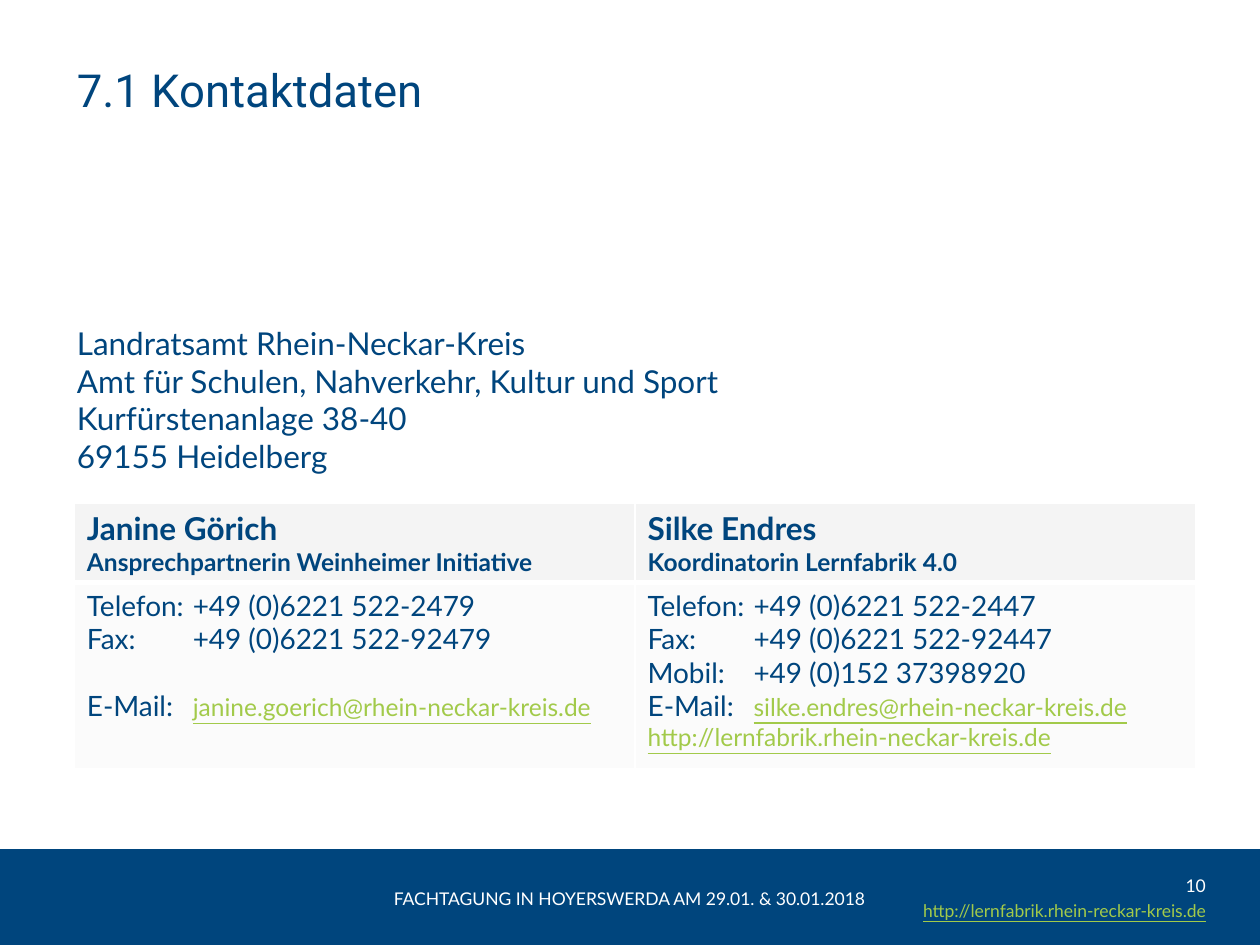
from dataclasses import dataclass

from lxml.etree import SubElement
from pptx import Presentation
from pptx.dml.color import RGBColor as RGB
from pptx.enum.shapes import MSO_SHAPE as SHAPE
from pptx.enum.text import MSO_ANCHOR as ANCHOR, MSO_AUTO_SIZE as AUTO, PP_ALIGN as ALIGN
from pptx.oxml import parse_xml
from pptx.oxml.ns import nsdecls, qn
from pptx.util import Inches, Pt


@dataclass(frozen=True)
class Theme:
    navy: str = "00457D"
    green: str = "A2CA4A"
    white: str = "FFFFFF"
    head_fill: str = "F4F4F4"
    body_fill: str = "FBFBFB"
    heading: str = "Roboto"
    text: str = "Lato"
    title: int = 26
    large: int = 18
    medium: int = 16
    small: int = 14
    footer: int = 10


T = Theme()


def add_run(p, text, size=T.large, color=T.navy, font=T.text, bold=False, underline=False):
    r = p.add_run()
    r.text = text
    r.font.name = font
    r.font.size = Pt(size)
    r.font.bold = bold
    r.font.underline = underline
    r.font.color.rgb = RGB.from_string(color)


def add_paragraph(tf, first):
    return tf.paragraphs[0] if first else tf.add_paragraph()


def add_tab(p, position):
    tabs = SubElement(p._p.get_or_add_pPr(), qn("a:tabLst"))
    SubElement(tabs, qn("a:tab"), pos=str(Inches(position)), algn="l")


def set_borders(cell, top, bottom):
    tcPr = cell._tc.get_or_add_tcPr()
    for i, (side, width) in enumerate(dict(L=1, R=1, T=top, B=bottom).items()):
        tcPr.insert(i, parse_xml(
            f'<a:ln{side} {nsdecls("a")} w="{Pt(width)}"><a:solidFill>'
            f'<a:srgbClr val="{T.white}"/></a:solidFill></a:ln{side}>'))


class SlideBuilder:
    def __init__(self, prs, theme):
        self.theme = theme
        self.s = prs.slides.add_slide(prs.slide_layouts[1])

    def place(self, sp, left, top, width, height):
        sp.left, sp.top, sp.width, sp.height = map(Inches, (left, top, width, height))
        tf = sp.text_frame
        tf.word_wrap = True
        tf.auto_size = AUTO.NONE
        tf.vertical_anchor = ANCHOR.TOP
        return tf

    def title(self, text, *box):
        p = self.place(self.s.shapes.title, *box).paragraphs[0]
        p.alignment = ALIGN.LEFT
        add_run(p, text, size=self.theme.title, font=self.theme.heading)

    def body(self, lines, *box):
        tf = self.place(self.s.placeholders[1], *box)
        for i, line in enumerate(lines):
            p = add_paragraph(tf, i == 0)
            p.space_before = Pt(0)
            pPr = p._p.get_or_add_pPr()
            pPr.set("marL", "0")
            pPr.set("indent", "0")
            SubElement(pPr, qn("a:buNone"))
            add_run(p, line)

    def band(self, *box):
        sp = self.s.shapes.add_shape(SHAPE.RECTANGLE, *map(Inches, box))
        sp.shadow.inherit = False
        sp.fill.solid()
        sp.fill.fore_color.rgb = RGB.from_string(self.theme.navy)
        sp.line.fill.background()

    def footer(self, lines, *box, align=ALIGN.CENTER, anchor=ANCHOR.MIDDLE, right=0.1):
        tf = self.place(self.s.shapes.add_textbox(0, 0, 0, 0), *box)
        tf.vertical_anchor = anchor
        tf.margin_right = Inches(right)
        for i, (text, style) in enumerate(lines):
            p = add_paragraph(tf, i == 0)
            p.alignment = align
            p.line_spacing = Pt(14)
            add_run(p, text, **{"size": self.theme.footer, "color": self.theme.white, **style})

    def contacts(self, people, left, top, col_width, row_heights):
        frame = self.s.shapes.add_table(
            2, len(people), Inches(left), Inches(top),
            Inches(col_width * len(people)), Inches(sum(row_heights)))
        table = frame.table
        for row, height in zip(table.rows, row_heights):
            row.height = Inches(height)
        for c, (name, role, entries) in enumerate(people):
            table.columns[c].width = Inches(col_width)
            head, details = table.cell(0, c), table.cell(1, c)
            for cell, color, edges in ((head, self.theme.head_fill, (1, 3)),
                                       (details, self.theme.body_fill, (3, 1))):
                cell.fill.solid()
                cell.fill.fore_color.rgb = RGB.from_string(color)
                set_borders(cell, *edges)
            tf = head.text_frame
            add_run(tf.paragraphs[0], name, bold=True)
            add_run(tf.add_paragraph(), role, size=self.theme.small, bold=True)
            for i, (label, value, gap) in enumerate(entries):
                self.entry(add_paragraph(details.text_frame, i == 0), label, value, gap)

    def entry(self, p, label, value, gap):
        if gap:
            p.space_before = Pt(gap)
        if label:
            add_tab(p, 0.84)
            add_run(p, label + "\t", size=self.theme.medium)
        if value.startswith("+"):
            add_run(p, value, size=self.theme.medium)
        else:
            add_run(p, value, size=self.theme.small, color=self.theme.green, underline=True)


def main():
    prs = Presentation()
    prs.slide_width, prs.slide_height = Inches(10), Inches(7.5)
    slide = SlideBuilder(prs, T)
    slide.band(0, 6.74, 10, 0.76)
    slide.footer([("10", {}),
                  ("http://lernfabrik.rhein-reckar-kreis.de", {"color": T.green, "underline": True})],
                 6.34, 6.87, 3.23, 0.5, align=ALIGN.RIGHT, anchor=ANCHOR.TOP, right=0)
    slide.footer([("FACHTAGUNG IN HOYERSWERDA AM 29.01. & 30.01.2018", {})],
                 2.91, 6.87, 4.17, 0.5)
    slide.title("7.1 Kontaktdaten", 0.51, 0.44, 8.98, 0.94)
    slide.body(["Landratsamt Rhein-Neckar-Kreis",
                "Amt für Schulen, Nahverkehr, Kultur und Sport",
                "Kurfürstenanlage 38-40",
                "69155 Heidelberg"], 0.51, 2.52, 9, 1.31)
    slide.contacts([
        ("Janine Görich", "Ansprechpartnerin Weinheimer Initiative", [
            ("Telefon:", "+49 (0)6221 522-2479", 0),
            ("Fax:", "+49 (0)6221 522-92479", 0),
            ("E-Mail:", "janine.goerich@rhein-neckar-kreis.de", 19.2)]),
        ("Silke Endres", "Koordinatorin Lernfabrik 4.0", [
            ("Telefon:", "+49 (0)6221 522-2447", 0),
            ("Fax:", "+49 (0)6221 522-92447", 0),
            ("Mobil:", "+49 (0)152 37398920", 0),
            ("E-Mail:", "silke.endres@rhein-neckar-kreis.de", 0),
            ("", "http://lernfabrik.rhein-neckar-kreis.de", 0)]),
    ], 0.59, 3.99, 4.45, (0.62, 1.48))
    prs.save("out.pptx")


if __name__ == "__main__":
    main()
